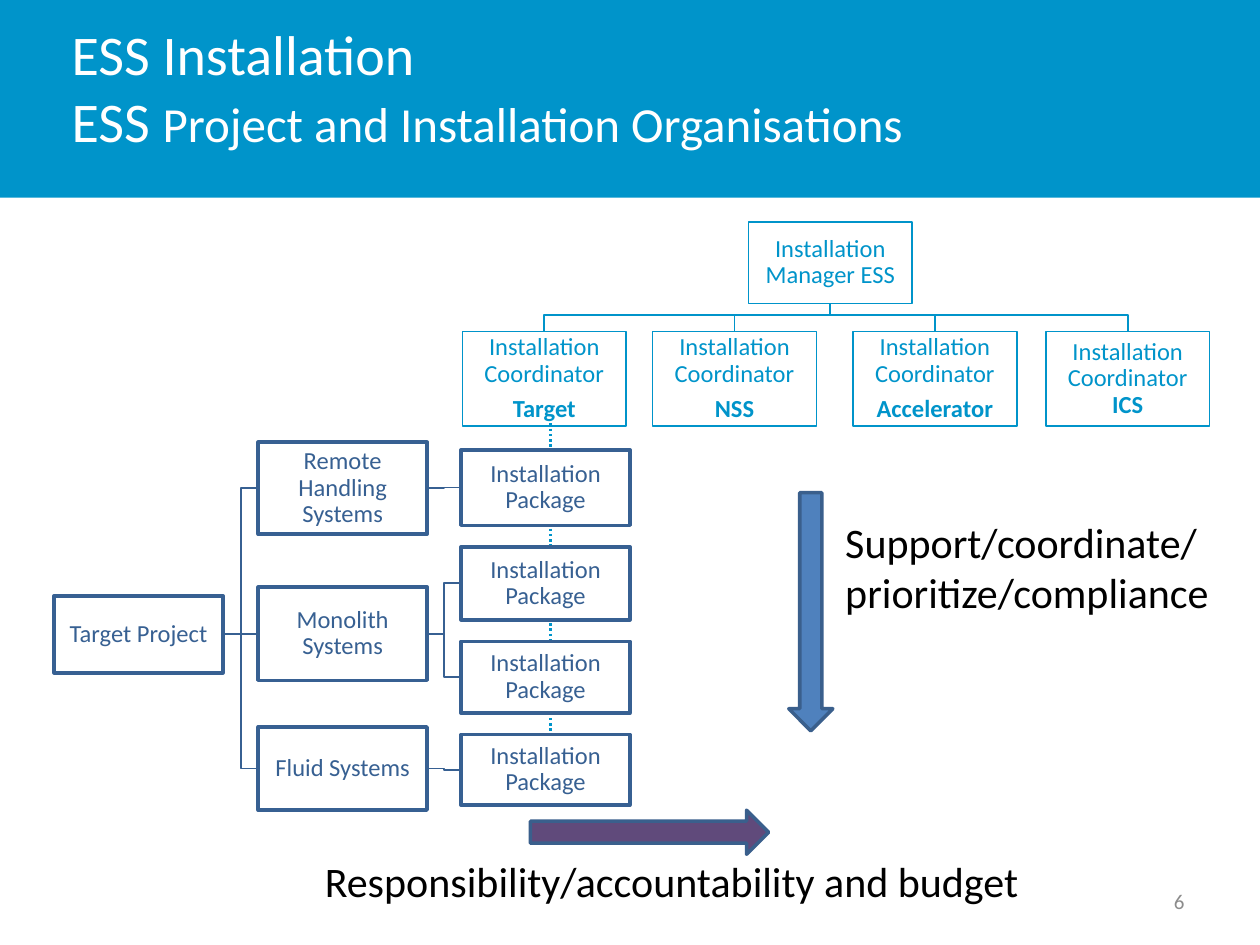
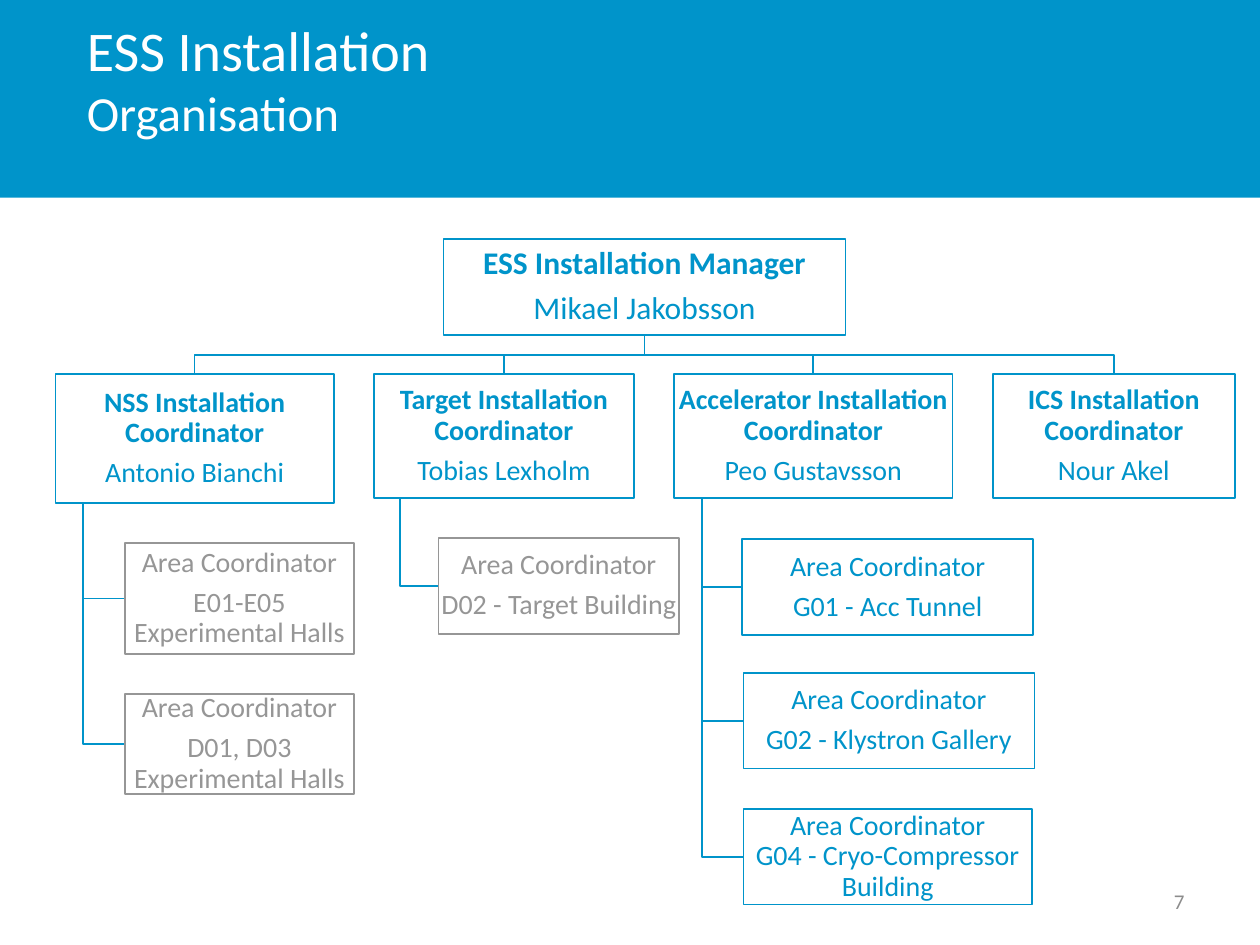
from dataclasses import dataclass
from typing import Optional

from lxml import etree
from pptx import Presentation
from pptx.dml.color import RGBColor as Rgb
from pptx.enum.dml import MSO_LINE_DASH_STYLE as Dash
from pptx.enum.shapes import MSO_CONNECTOR as Conn, MSO_SHAPE as Kind
from pptx.enum.text import MSO_ANCHOR as Anchor, PP_ALIGN as Align
from pptx.oxml.ns import qn
from pptx.util import Inches, Pt

# Shared look
FONT = "Calibri"
BLUE, NAVY, GREY = "0094CA", "376092", "969696"
WHITE, BLACK, PALE = "FFFFFF", "000000", "8C8C8C"
EDGE, STEEL, PLUM = "3A5F8C", "4F81BD", "604A7B"


@dataclass
class Box:
    """A chart box; bold is the index of its one bold run."""
    x: float
    y: float
    w: float
    h: float
    text: str
    bold: Optional[int] = None
    size: int = 16
    color: str = BLUE
    line: float = 1
    fill: Optional[str] = None

    @property
    def mid_x(self) -> float:
        return self.x + self.w / 2

    @property
    def mid_y(self) -> float:
        return self.y + self.h / 2

    @property
    def end_x(self) -> float:
        return self.x + self.w

    @property
    def end_y(self) -> float:
        return self.y + self.h


def rgb(code: str) -> Rgb:
    return Rgb.from_string(code)


def style(run, size: float, color: str, bold: bool = False) -> None:
    font = run.font
    font.name, font.size, font.bold = FONT, Pt(size), bold
    font.color.rgb = rgb(color)


def paint(shape, fill: Optional[str], line: Optional[str], width: float = 1) -> None:
    shape.shadow.inherit = False
    if fill:
        shape.fill.solid()
        shape.fill.fore_color.rgb = rgb(fill)
    else:
        shape.fill.background()
    if line:
        shape.line.color.rgb = rgb(line)
        shape.line.width = Pt(width)
    else:
        shape.line.fill.background()


def block(slide, kind, x: float, y: float, w: float, h: float,
          fill: Optional[str], line: Optional[str] = None, width: float = 2):
    shape = slide.shapes.add_shape(kind, Inches(x), Inches(y), Inches(w), Inches(h))
    paint(shape, fill, line, width)
    return shape


def label(slide, x: float, y: float, w: float, h: float, text: str, size: float,
          color: str, align=Align.LEFT, anchor=Anchor.TOP, wrap: bool = True):
    area = slide.shapes.add_textbox(Inches(x), Inches(y), Inches(w), Inches(h))
    frame = area.text_frame
    frame.word_wrap, frame.vertical_anchor = wrap, anchor
    frame.text = text
    for para in frame.paragraphs:
        para.alignment = align
        for run in para.runs:
            style(run, size, color)
    return frame


def start(deck, x: float, y: float, head: str, sub: str, page: int):
    """Add a slide with the band, the two-size title and the page number."""
    slide = deck.slides.add_slide(deck.slide_layouts[6])
    block(slide, Kind.RECTANGLE, 0, 0, 10, 1.57, BLUE)
    frame = label(slide, x, y, 7.81, 1.25, "", 32, WHITE, anchor=Anchor.MIDDLE)
    para = frame.paragraphs[0]
    para.text = head
    for run in para.runs:
        style(run, 32, WHITE)
    tail = para.add_run()
    tail.text = sub
    style(tail, 28, WHITE)
    label(slide, 7.17, 6.95, 2.33, 0.4, str(page), 12, PALE, Align.RIGHT, Anchor.MIDDLE)
    return slide


def draw(slide, box: Box) -> None:
    shape = block(slide, Kind.RECTANGLE, box.x, box.y, box.w, box.h,
                  box.fill, box.color, box.line)
    frame = shape.text_frame
    frame.word_wrap, frame.vertical_anchor = True, Anchor.MIDDLE
    frame.margin_left = frame.margin_right = Inches(0.01)
    frame.margin_top = frame.margin_bottom = Inches(0.01)
    frame.text = box.text
    runs = []
    for para in frame.paragraphs:
        para.alignment, para.line_spacing = Align.CENTER, 0.9
        para.space_after = Pt(box.size * 0.35)
        runs += para.runs
    for run in runs:
        style(run, box.size, box.color)
    if box.bold is not None:
        runs[box.bold].font.bold = True


# Links between boxes
def trace(slide, color: str, *spots: tuple[float, float]) -> None:
    first, *rest = [(Inches(x), Inches(y)) for x, y in spots]
    pen = slide.shapes.build_freeform(*first)
    pen.add_line_segments(rest, close=False)
    paint(pen.convert_to_shape(), None, color)


def drop(slide, top: Box, kids: list[Box], gap: float) -> None:
    """Link a box to the row below it."""
    bar = top.end_y + gap
    for kid in kids:
        trace(slide, top.color, (top.mid_x, top.end_y), (top.mid_x, bar),
              (kid.mid_x, bar), (kid.mid_x, kid.y))


def fork(slide, root: Box, kids: list[Box]) -> None:
    """Link a box to the column on its right."""
    bar = (root.end_x + kids[0].x) / 2
    for kid in kids:
        trace(slide, root.color, (root.end_x, root.mid_y), (bar, root.mid_y),
              (bar, kid.mid_y), (kid.x, kid.mid_y))


def hang(slide, head: Box, kids: list[Box]) -> None:
    """Link a box to the indented stack under it."""
    bar = head.x + head.w / 10
    for kid in kids:
        trace(slide, head.color, (bar, head.end_y), (bar, kid.mid_y), (kid.x, kid.mid_y))


def dots(slide, x: float, top: float, end: float) -> None:
    line = slide.shapes.add_connector(Conn.STRAIGHT, Inches(x), Inches(top),
                                      Inches(x), Inches(end))
    line.line.color.rgb = rgb(BLUE)
    line.line.width = Pt(1.5)
    line.line.dash_style = Dash.ROUND_DOT
    etree.SubElement(line._element.spPr, qn("a:effectLst"))


def project(deck) -> None:
    slide = start(deck, 0.47, 0.06, "ESS Installation\vESS ",
                  "Project and Installation Organisations", 6)
    dots(slide, 4.37, 3.36, 5.95)

    # Project tree, left to right
    def unit(x: float, y: float, h: float, text: str) -> Box:
        return Box(x, y, 1.34, h, text, size=14, color=NAVY, line=2, fill=WHITE)

    root = unit(0.43, 4.73, 0.61, "Target Project")
    systems = [unit(2.05, y, h, text) for y, h, text in (
        (3.51, 0.73, "Remote Handling Systems"),
        (4.66, 0.74, "Monolith Systems"),
        (5.77, 0.66, "Fluid Systems"))]
    packs = [unit(3.66, y, h, "Installation Package") for y, h in (
        (3.57, 0.6), (4.34, 0.58), (5.09, 0.57), (5.83, 0.56))]
    fork(slide, root, systems)
    for system, own in zip(systems, (packs[:1], packs[1:3], packs[3:])):
        fork(slide, system, own)

    # Installation tree, top down
    boss = Box(5.94, 1.76, 1.3, 0.65, "Installation Manager ESS", size=14)
    leads = [Box(x, 2.63, 1.3, 0.75, f"Installation Coordinator{cut}{name}", -1, 14)
             for x, cut, name in ((3.67, "\n", "Target"), (5.18, "\n", "NSS"),
                                  (6.77, "\n", "Accelerator"), (8.3, "\v", "ICS"))]
    drop(slide, boss, leads, 0.09)
    for box in (root, *systems, *packs, boss, *leads):
        draw(slide, box)

    # Arrows and their notes
    block(slide, Kind.DOWN_ARROW, 6.26, 3.91, 0.35, 1.89, STEEL, EDGE)
    block(slide, Kind.RIGHT_ARROW, 4.21, 6.43, 1.89, 0.35, PLUM, EDGE)
    label(slide, 2.48, 6.74, 5.76, 0.5, "Responsibility/accountability and budget",
          24, BLACK, wrap=False)
    label(slide, 6.61, 4.05, 3.39, 0.91, "Support/coordinate/\nprioritize/compliance",
          24, BLACK)


def people(deck) -> None:
    slide = start(deck, 0.59, 0, "ESS Installation\v", "Organisation", 7)

    # Manager and coordinators
    boss = Box(3.52, 1.9, 3.19, 0.76, "ESS Installation Manager\nMikael Jakobsson", 0, 18)
    leads = [Box(x, 2.97, w, h, f"{part} Installation Coordinator\n{name}", 0)
             for x, w, h, part, name in (
                 (0.44, 2.21, 1.02, "NSS", "Antonio Bianchi"),
                 (2.97, 2.06, 0.98, "Target", "Tobias Lexholm"),
                 (5.35, 2.21, 0.98, "Accelerator", "Peo Gustavsson"),
                 (7.88, 1.92, 0.98, "ICS", "Nour Akel"))]
    drop(slide, boss, leads, 0.16)

    # Areas under each coordinator
    def area(x: float, y: float, w: float, h: float, text: str,
             color: str = BLUE, cut: str = "\n") -> Box:
        return Box(x, y, w, h, f"Area Coordinator{cut}{text}", color=color)

    areas = [
        [area(0.99, 4.31, 1.82, 0.88, "E01-E05 Experimental Halls", GREY),
         area(0.99, 5.51, 1.82, 0.79, "D01, D03 Experimental Halls", GREY)],
        [area(3.48, 4.27, 1.91, 0.76, "D02 - Target Building", GREY)],
        [area(5.89, 4.28, 2.31, 0.76, "G01 - Acc Tunnel"),
         area(5.9, 5.34, 2.31, 0.76, "G02 - Klystron Gallery"),
         area(5.9, 6.42, 2.29, 0.76, "G04 - Cryo-Compressor Building", cut="\v")],
    ]
    for lead, own in zip(leads, areas):
        hang(slide, lead, own)
    for box in (boss, *leads, *sum(areas, [])):
        draw(slide, box)


def main() -> None:
    deck = Presentation()
    deck.slide_width, deck.slide_height = Inches(10), Inches(7.5)
    project(deck)
    people(deck)
    deck.save("out.pptx")


if __name__ == "__main__":
    main()
